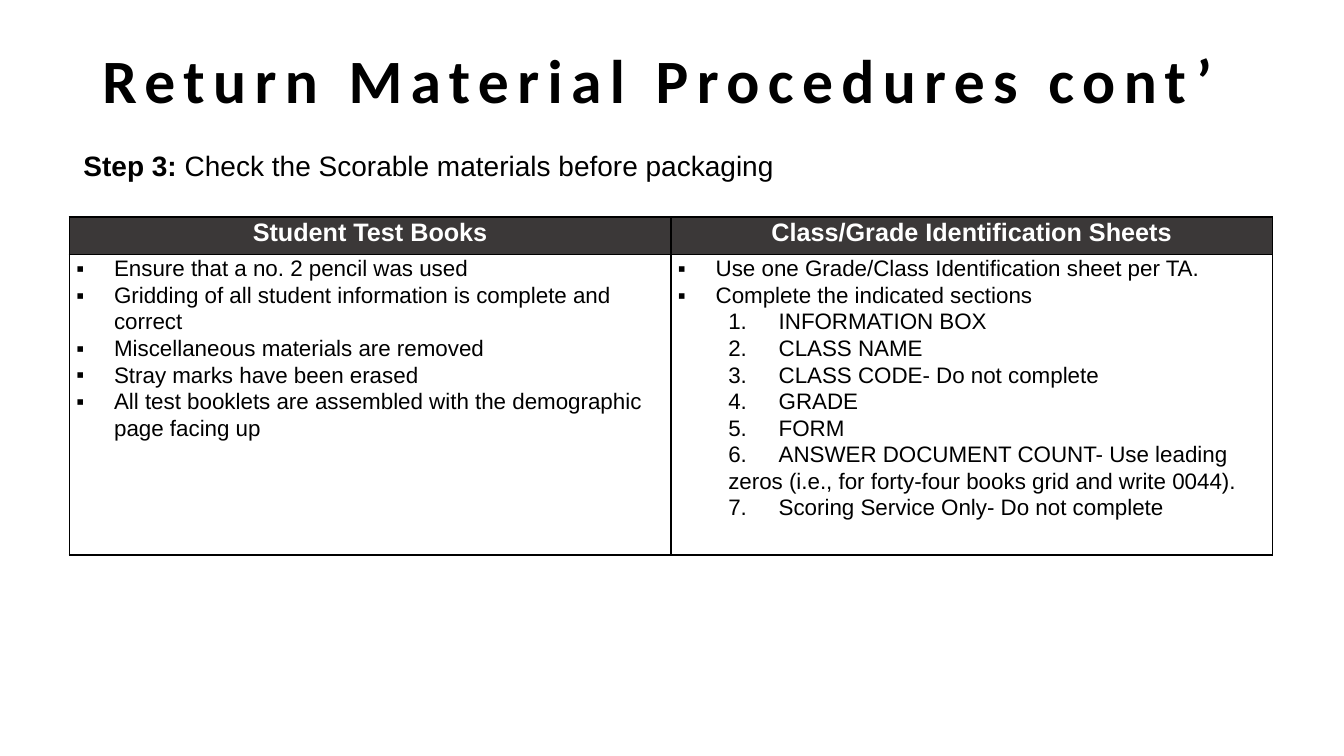
"""Build the slide on returning scorable test materials."""
from dataclasses import dataclass

from lxml.etree import SubElement
from pptx import Presentation
from pptx.dml.color import RGBColor
from pptx.enum.text import MSO_ANCHOR, MSO_AUTO_SIZE, PP_ALIGN
from pptx.oxml.ns import qn
from pptx.util import Pt

BLACK, WHITE, CHARCOAL = "000000", "FFFFFF", "3B3838"
TITLE = {"name": "Calibri", "size": Pt(44), "bold": True}
STEP = {"name": "Arial", "size": Pt(20), "bold": False}
STEP_LABEL = {**STEP, "bold": True}
HEADER = {"name": "Arial", "size": Pt(18), "bold": True}
BODY = {"name": "Arial", "size": Pt(16), "bold": False}
CELL_MARGINS = {"margin_left": Pt(5), "margin_right": Pt(5),
                "margin_top": Pt(0), "margin_bottom": Pt(0)}
ROW_HEIGHTS = (27, 214.5)
COLUMN_WIDTH = 429.75


@dataclass
class Column:
    heading: str
    bullets: list[str]
    sections: list[str]


COLUMNS = [
    Column("Student Test Books", [
        "Ensure that a no. 2 pencil was used",
        "Gridding of all student information is complete and correct",
        "Miscellaneous materials are removed",
        "Stray marks have been erased",
        "All test booklets are assembled with the demographic page facing up",
    ], []),
    Column("Class/Grade Identification Sheets", [
        "Use one Grade/Class Identification sheet per TA.",
        "Complete the indicated sections",
    ], [
        "INFORMATION BOX",
        "CLASS NAME",
        "CLASS CODE- Do not complete",
        "GRADE",
        "FORM",
        "ANSWER DOCUMENT COUNT- Use leading zeros "
        "(i.e., for forty-four books grid and write 0044).",
        "Scoring Service Only- Do not complete",
    ]),
]


def rgb(value: str) -> RGBColor:
    """Turn a hex string into a colour."""
    return RGBColor.from_string(value)


def set_all(target, values: dict) -> None:
    """Set each named attribute of the target."""
    for name, value in values.items():
        setattr(target, name, value)


def add_run(p, text: str, style: dict, color: str = BLACK):
    """Add a formatted run to a paragraph."""
    r = p.add_run()
    r.text = text
    set_all(r.font, style)
    r.font.color.rgb = rgb(color)
    return r


def set_indent(p, left: float, first: float = 0) -> None:
    """Set the left and first-line indents in points."""
    pPr = p._p.get_or_add_pPr()
    pPr.set("marL", str(Pt(left)))
    pPr.set("indent", str(Pt(first)))


def add_textbox(slide, left: float, top: float, width: float, height: float):
    """Add a wrapping text box and return its text frame."""
    sp = slide.shapes.add_textbox(Pt(left), Pt(top), Pt(width), Pt(height))
    sp.text_frame.word_wrap = True
    return sp.text_frame


def add_borders(cell) -> None:
    """Draw a thin black line on all four sides of a cell."""
    tcPr = cell._tc.get_or_add_tcPr()
    for side in ("lnL", "lnR", "lnT", "lnB"):
        ln = SubElement(tcPr, qn(f"a:{side}"), w=str(Pt(1)))
        SubElement(SubElement(ln, qn("a:solidFill")), qn("a:srgbClr"), val=BLACK)


def fill_header(cell, heading: str) -> None:
    """Write a centred heading on a dark cell."""
    cell.fill.solid()
    cell.fill.fore_color.rgb = rgb(CHARCOAL)
    p = cell.text_frame.paragraphs[0]
    set_all(p, {"alignment": PP_ALIGN.CENTER, "line_spacing": 1.07})
    add_run(p, heading, HEADER, WHITE)


def fill_body(cell, column: Column) -> None:
    """Write the bullets and numbered sections of a column."""
    cell.fill.background()
    tf = cell.text_frame
    for i, text in enumerate(column.bullets):
        p = tf.add_paragraph() if i else tf.paragraphs[0]
        p.line_spacing = 1.07
        set_indent(p, 27, -27)
        pPr = p._p.get_or_add_pPr()
        SubElement(pPr, qn("a:buFont"), typeface="Arial")
        SubElement(pPr, qn("a:buChar"), char="▪")
        add_run(p, text, BODY)
    for number, text in enumerate(column.sections, 1):
        p = tf.add_paragraph()
        set_all(p, {"level": 1, "line_spacing": 1.07})
        set_indent(p, 36)
        add_run(p, f"{number}.\t{text}", BODY)


def add_checklist(slide, columns: list[Column]) -> None:
    """Add the table with one heading and one list per column."""
    table = slide.shapes.add_table(
        len(ROW_HEIGHTS), len(columns), Pt(49.5), Pt(155),
        Pt(COLUMN_WIDTH * len(columns)), Pt(sum(ROW_HEIGHTS))).table
    set_all(table, {"first_row": False, "horz_banding": False})
    for row, height in zip(table.rows, ROW_HEIGHTS):
        row.height = Pt(height)
    for cell in table.iter_cells():
        set_all(cell, CELL_MARGINS)
        add_borders(cell)
    for i, column in enumerate(columns):
        table.columns[i].width = Pt(COLUMN_WIDTH)
        fill_header(table.cell(0, i), column.heading)
        fill_body(table.cell(1, i), column)


def main() -> None:
    """Build and save the presentation."""
    prs = Presentation()
    set_all(prs, {"slide_width": Pt(960), "slide_height": Pt(540)})
    slide = prs.slides.add_slide(prs.slide_layouts[6])

    tf = add_textbox(slide, 66, 28.75, 828, 61.25)
    tf.vertical_anchor = MSO_ANCHOR.MIDDLE
    p = tf.paragraphs[0]
    p.line_spacing = 0.9
    r = add_run(p, "Return Material Procedures cont’", TITLE)
    r.font._element.set("spc", "600")

    tf = add_textbox(slide, 48, 102, 861, 31)
    tf.auto_size = MSO_AUTO_SIZE.SHAPE_TO_FIT_TEXT
    p = tf.paragraphs[0]
    p.line_spacing = 1.02
    set_indent(p, 4.5)
    add_run(p, "Step 3: ", STEP_LABEL)
    add_run(p, "Check the Scorable materials before packaging", STEP)

    add_checklist(slide, COLUMNS)
    prs.save("out.pptx")


if __name__ == "__main__":
    main()
